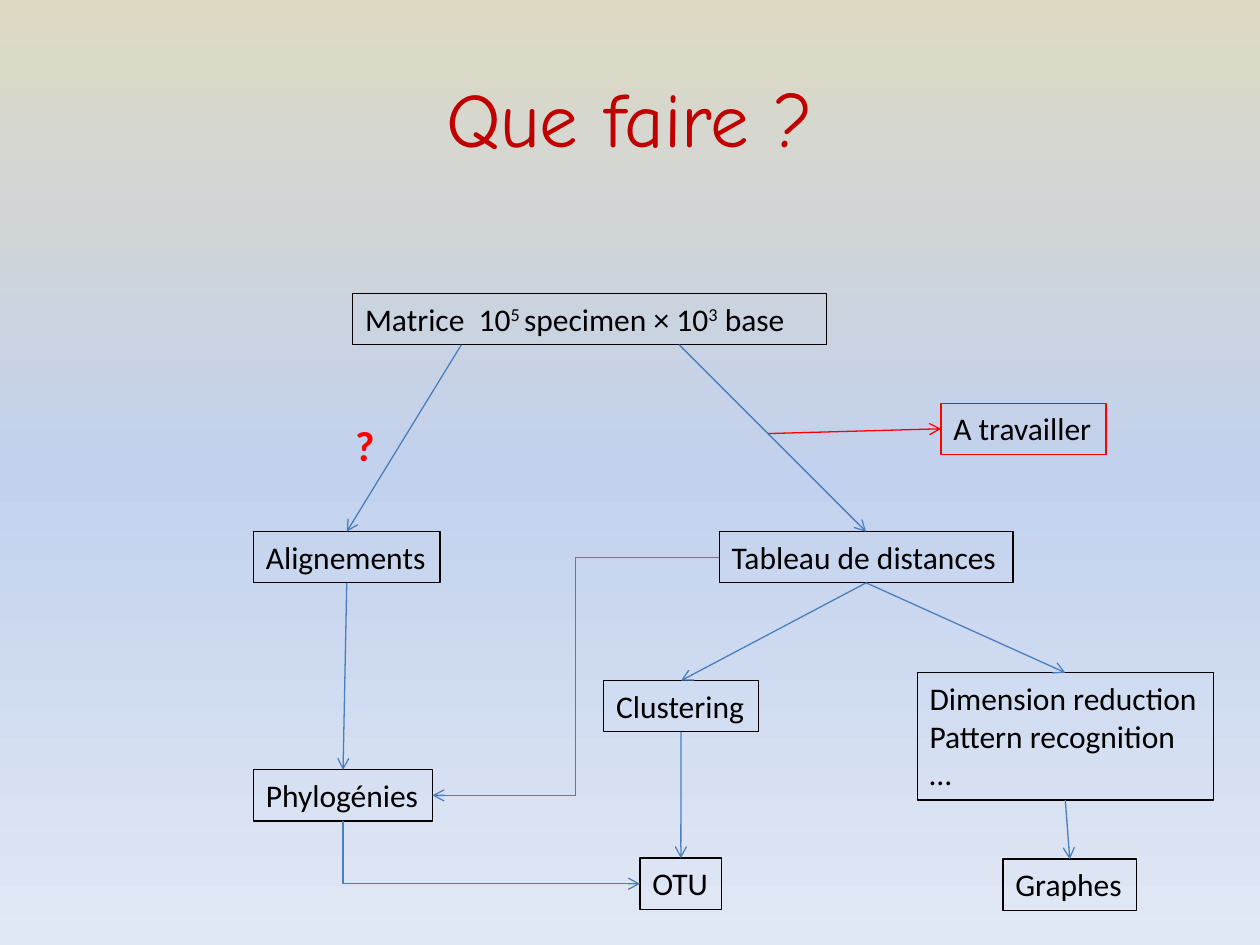
import copy

import pptx
import pptx.dml.color
import pptx.enum.shapes
import pptx.enum.text
import pptx.oxml
import pptx.oxml.ns
import pptx.util

Cm = pptx.util.Cm
Pt = pptx.util.Pt
qn = pptx.oxml.ns.qn
CONNECTOR = pptx.enum.shapes.MSO_CONNECTOR
TOP, LEFT, BOTTOM, RIGHT = range(4)
ROW_HEIGHT = 1.03

COLORS = {
    "sand": "DDD9C3", "sky": "C2D1ED", "mist": "E1E8F5",
    "title": "C00000", "text": "000000", "flow": "4B7EBC", "alert": "FF0000",
}


def rgb(name):
    return pptx.dml.color.RGBColor.from_string(COLORS[name])


def paint_background(slide):
    fill = slide.background.fill
    fill.gradient()
    fill.gradient_angle = 270
    stops = slide._element.find(".//" + qn("a:gsLst"))
    stops.insert(1, copy.deepcopy(stops[0]))
    for stop, position, name in zip(fill.gradient_stops, (0, 0.5, 1),
                                    ("sand", "sky", "mist")):
        stop.position = position
        stop.color.rgb = rgb(name)


def add_run(paragraph, text, size, color, font="Calibri", bold=None, raised=False):
    run = paragraph.add_run()
    run.text = text
    run.font.size = Pt(size)
    run.font.name = font
    run.font.bold = bold
    run.font.color.rgb = rgb(color)
    if raised:
        run._r.get_or_add_rPr().set("baseline", "30000")


def place_title(slide, left, top, width, height):
    title = slide.shapes.title
    title.left, title.top = Cm(left), Cm(top)
    title.width, title.height = Cm(width), Cm(height)
    title.text_frame.vertical_anchor = pptx.enum.text.MSO_ANCHOR.MIDDLE
    heading = title.text_frame.paragraphs[0]
    heading.alignment = pptx.enum.text.PP_ALIGN.CENTER
    add_run(heading, "Que faire ?", 44, "title", font="Comic Neue")


def add_label(slide, left, top, width, height):
    label = slide.shapes.add_textbox(Cm(left), Cm(top), Cm(width), Cm(height))
    label.text_frame.word_wrap = False
    label.text_frame.auto_size = pptx.enum.text.MSO_AUTO_SIZE.SHAPE_TO_FIT_TEXT
    return label


def add_step(slide, left, top, width, lines, height=ROW_HEIGHT, outline="text"):
    """Outlined box; each line is a list of (text, raised) runs."""
    step = add_label(slide, left, top, width, height)
    step.line.color.rgb = rgb(outline)
    step.line.width = Pt(0.75)
    frame = step.text_frame
    for index, runs in enumerate(lines):
        paragraph = frame.add_paragraph() if index else frame.paragraphs[0]
        for text, raised in runs:
            add_run(paragraph, text, 18, "text", raised=raised)
    return step


def add_arrow(slide, target, target_side, source=None, source_side=BOTTOM,
              start=(0, 0), kind=CONNECTOR.STRAIGHT, color="flow"):
    """Arrow to a box side, from another box side or from a free point in cm."""
    x, y = (Cm(value) for value in start)
    arrow = slide.shapes.add_connector(kind, x, y, x, y)
    if source is not None:
        arrow.begin_connect(source, source_side)
    arrow.end_connect(target, target_side)
    arrow.line.color.rgb = rgb(color)
    arrow.line.width = Pt(0.75)
    line = arrow.line._get_or_add_ln()
    line.append(pptx.oxml.parse_xml(
        '<a:tailEnd %s type="arrow"/>' % pptx.oxml.ns.nsdecls("a")))
    arrow._element.spPr.append(pptx.oxml.parse_xml(
        "<a:effectLst %s/>" % pptx.oxml.ns.nsdecls("a")))
    return arrow


def make_corner(arrow):
    """Turn an elbow into a single bend: down, then right."""
    run, drop = arrow.width, arrow.height
    center_x, center_y = arrow.left + run // 2, arrow.top + drop // 2
    arrow.left, arrow.top = center_x - drop // 2, center_y - run // 2
    arrow.width, arrow.height = drop, run
    properties = arrow._element.spPr
    properties.find(qn("a:prstGeom")).set("prst", "bentConnector2")
    frame = properties.find(qn("a:xfrm"))
    frame.set("rot", str(270 * 60000))
    frame.set("flipH", "1")


def draw_flow(slide, left, top):
    def step(x, y, width, *texts, **options):
        lines = [[(text, False)] if isinstance(text, str) else text for text in texts]
        return add_step(slide, left + x, top + y, width, lines, **options)

    def point(x, y):
        return left + x, top + y

    # Steps
    data = step(2, 0, 9.55, [("Matrice  10", False), ("5 ", True),
                             ("specimen × 10", False), ("3", True), (" base", False)])
    alignments = step(0, 4.8, 3.76, "Alignements")
    phylogenies = step(0, 9.6, 3.61, "Phylogénies")
    otu = step(7.79, 11.38, 1.65, "OTU")
    distances = step(9.39, 4.8, 5.92, "Tableau de distances")
    clustering = step(7.06, 7.8, 3.12, "Clustering")
    reduction = step(13.38, 7.64, 5.97, "Dimension reduction",
                     "Pattern recognition", "…", height=2.57)
    graphs = step(15.11, 11.4, 2.69, "Graphes")
    todo = step(13.86, 2.21, 3.33, "A travailler", outline="alert")

    # Open question on the alignment branch
    question = add_label(slide, left + 1.8, top + 2.41, 0.91, 1.28)
    add_run(question.text_frame.paragraphs[0], "?", 24, "alert", bold=True)

    # Branches leaving the data table, and the remark on one of them
    add_arrow(slide, alignments, TOP, start=point(4.19, ROW_HEIGHT))
    add_arrow(slide, distances, TOP, start=point(8.58, ROW_HEIGHT))
    add_arrow(slide, todo, LEFT, start=point(10.38, 2.82), color="alert")

    # Downward arrows between steps
    for source, target in ((alignments, phylogenies), (distances, clustering),
                           (clustering, otu), (distances, reduction),
                           (reduction, graphs)):
        add_arrow(slide, target, TOP, source)

    # Bent arrows
    add_arrow(slide, phylogenies, RIGHT, distances, LEFT, kind=CONNECTOR.ELBOW)
    make_corner(add_arrow(slide, otu, LEFT, phylogenies, kind=CONNECTOR.ELBOW))


def main():
    deck = pptx.Presentation()
    deck.slide_width, deck.slide_height = Cm(25.4), Cm(19.05)
    slide = deck.slides.add_slide(deck.slide_layouts[5])
    paint_background(slide)
    place_title(slide, 1.27, 0.76, 22.86, 3.18)
    draw_flow(slide, 5.11, 5.92)
    deck.save("out.pptx")


if __name__ == "__main__":
    main()
